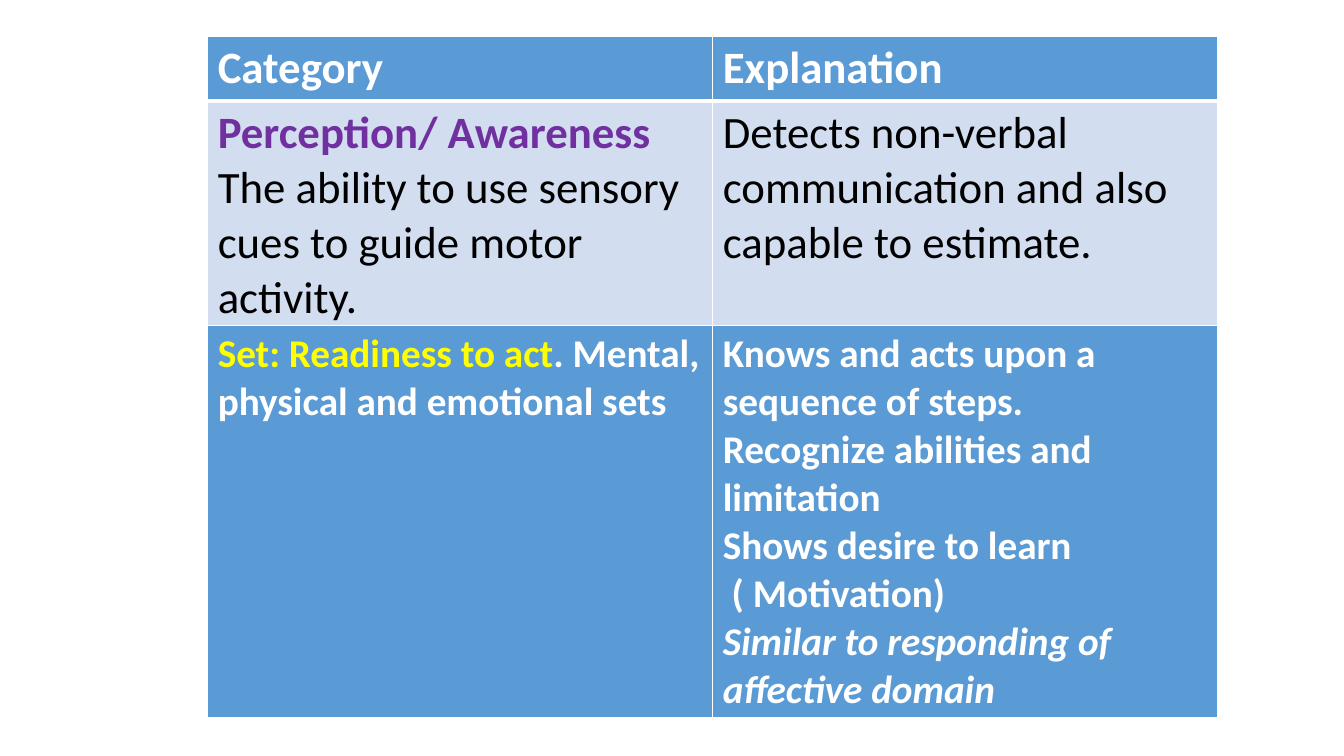
from dataclasses import dataclass

from lxml import etree
from pptx import Presentation
from pptx.dml.color import RGBColor
from pptx.oxml.ns import qn
from pptx.util import Inches, Pt


@dataclass(frozen=True)
class Theme:
    font: str = "Calibri"
    large: int = 32
    medium: int = 28
    blue: str = "5B9BD5"
    pale: str = "D2DEEF"
    white: str = "FFFFFF"
    black: str = "000000"
    purple: str = "7030A0"
    yellow: str = "FFFF00"
    thin: int = 1
    thick: int = 3


T = Theme()


def run(text, color=T.white, bold=True, italic=False):
    return text, color, bold, italic


# Each row: height, fill, top and bottom border widths, cells.
# Each cell is a list of paragraphs, each paragraph a list of runs.
PERCEPTION_ROWS = [
    (0.64, T.blue, T.thin, T.thick, [
        [[run("Category")]],
        [[run("Explanation")]],
    ]),
    (2.23, T.pale, T.thick, T.thin, [
        [[run("Perception/ Awareness", T.purple)],
         [run("The ability to use sensory cues to guide motor activity.", T.black, False)]],
        [[run("Detects non-verbal communication and also capable to estimate.",
              T.black, False)]],
    ]),
]
SET_ROWS = [
    (3.83, T.blue, T.thin, T.thick, [
        [[run("Set: Readiness to act", T.yellow),
          run(". Mental, physical and emotional sets")]],
        [[run("Knows and acts upon a sequence of steps.")],
         [run("Recognize abilities and limitation")],
         [run("Shows desire to learn")],
         [run(" ( Motivation)")],
         [run("Similar to responding of affective domain", italic=True)]],
    ]),
]


def set_borders(cell, top, bottom):
    tcPr = cell._tc.get_or_add_tcPr()
    sides = (("a:lnL", T.thin), ("a:lnR", T.thin), ("a:lnT", top), ("a:lnB", bottom))
    for tag, width in sides:
        ln = etree.SubElement(tcPr, qn(tag), w=str(Pt(width)))
        fill = etree.SubElement(ln, qn("a:solidFill"))
        etree.SubElement(fill, qn("a:srgbClr"), val=T.white)


def write_cell(cell, paragraphs, size):
    tf = cell.text_frame
    for i, runs in enumerate(paragraphs):
        p = tf.add_paragraph() if i else tf.paragraphs[0]
        for text, color, bold, italic in runs:
            r = p.add_run()
            r.text = text
            r.font.name = T.font
            r.font.size = Pt(size)
            r.font.bold = bold
            r.font.italic = italic
            r.font.color.rgb = RGBColor.from_string(color)


def add_category_table(s, left, top, width, rows, size):
    """Place a two-column table and return its bottom edge in inches."""
    height = sum(row[0] for row in rows)
    table = s.shapes.add_table(len(rows), 2, Inches(left), Inches(top),
                               Inches(width), Inches(height)).table
    for column in table.columns:
        column.width = Inches(width / 2)
    for i, (row_height, fill, upper, lower, cells) in enumerate(rows):
        table.rows[i].height = Inches(row_height)
        for cell, paragraphs in zip(table.rows[i].cells, cells):
            set_borders(cell, upper, lower)
            cell.fill.solid()
            cell.fill.fore_color.rgb = RGBColor.from_string(fill)
            write_cell(cell, paragraphs, size)
    return top + height


def main():
    prs = Presentation()
    prs.slide_width, prs.slide_height = Inches(13.33), Inches(7.5)
    s = prs.slides.add_slide(prs.slide_layouts[6])

    # The second table continues directly below the first
    left, width = 2.06, 10.02
    bottom = add_category_table(s, left, 0.36, width, PERCEPTION_ROWS, T.large)
    add_category_table(s, left, bottom, width, SET_ROWS, T.medium)

    prs.save("out.pptx")


if __name__ == "__main__":
    main()
